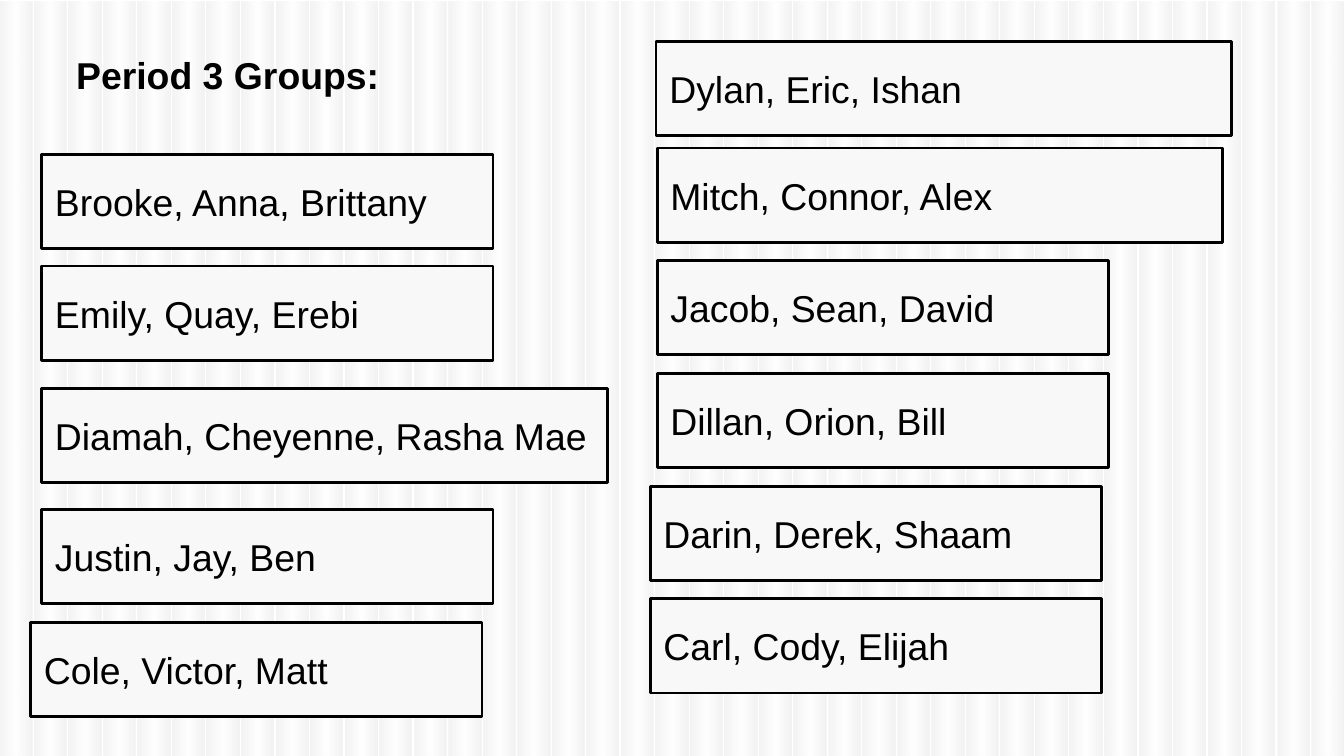
from dataclasses import dataclass

from lxml import etree
from pptx import Presentation
from pptx import util as u
from pptx.dml import color as c
from pptx.enum import shapes as s
from pptx.enum import text as t
from pptx.oxml import ns

STRIPES = 39
SPAN = 24.79
PITCH = 2.13
LEFT, RIGHT = 0.79, 12.42
SHORT, LONG = 8.53, 10.69


@dataclass
class Box:
    names: str
    left: float
    top: float
    width: float = SHORT
    height: float = 1.78


@dataclass
class Stop:
    place: int
    tint: str
    alpha: int = 19


BLEND = [Stop(0, "BFBFBF"), Stop(50, "FFFFFF"), Stop(97, "BFBFBF"), Stop(100, "BFBFBF")]


def row(step: int) -> float:
    return 2.8 + PITCH * step


BOXES = [
    Box("Carl, Cody, Elijah", 12.29, row(4)),
    Box("Brooke, Anna, Brittany", LEFT, 2.92),
    Box("Dylan, Eric, Ishan", 12.4, 0.79, 10.87),
    Box("Mitch, Connor, Alex", RIGHT, row(0), LONG),
    Box("Jacob, Sean, David", RIGHT, row(1)),
    Box("Dillan, Orion, Bill", RIGHT, row(2)),
    Box("Darin, Derek, Shaam", 12.29, row(3)),
    Box("Cole, Victor, Matt", 0.58, 11.76),
    Box("Justin, Jay, Ben", LEFT, 9.63),
    Box("Diamah, Cheyenne, Rasha Mae", LEFT, 7.34, LONG),
    Box("Emily, Quay, Erebi", LEFT, 5.03),
]
TITLE = Box("Period 3 Groups:", 1.19, 0.74, 9.5, 1.45)


def paint(target, code: str) -> None:
    target.rgb = c.RGBColor.from_string(code)


def bounds(box: Box) -> list[u.Length]:
    return [u.Cm(n) for n in (box.left, box.top, box.width, box.height)]


def add_rect(slide, box: Box):
    shape = slide.shapes.add_shape(s.MSO_SHAPE.RECTANGLE, *bounds(box))
    shape.shadow.inherit = False
    return shape


def add_stripe(slide, left: float) -> None:
    shape = add_rect(slide, Box("", left, 0.03, 0.61, 14.26))
    shape.line.fill.background()
    shape.fill.gradient()
    shape.fill.gradient_angle = 0
    stops = shape.element.spPr.find(".//" + ns.qn("a:gsLst"))
    for old in list(stops):
        stops.remove(old)
    for stop in BLEND:
        mark = etree.SubElement(stops, ns.qn("a:gs"), pos=str(stop.place * 1000))
        tint = etree.SubElement(mark, ns.qn("a:srgbClr"), val=stop.tint)
        etree.SubElement(tint, ns.qn("a:alpha"), val=str(stop.alpha * 1000))


def write(shape, words: str, anchor, bold: bool = False) -> None:
    frame = shape.text_frame
    frame.word_wrap = True
    frame.vertical_anchor = anchor
    frame.margin_left = frame.margin_right = u.Cm(0.25)
    frame.margin_top = frame.margin_bottom = u.Cm(0.25)
    line = frame.paragraphs[0]
    line.alignment = t.PP_ALIGN.LEFT
    run = line.add_run()
    run.text = words
    run.font.name = "Arial"
    run.font.size = u.Pt(20)
    run.font.bold = bold
    paint(run.font.color, "000000")


def add_group(slide, box: Box) -> None:
    shape = add_rect(slide, box)
    shape.fill.solid()
    paint(shape.fill.fore_color, "F8F8F8")
    paint(shape.line.color, "000000")
    shape.line.width = u.Pt(1.5)
    write(shape, box.names, t.MSO_ANCHOR.MIDDLE)


def main() -> None:
    deck = Presentation()
    deck.slide_width, deck.slide_height = u.Cm(25.4), u.Cm(14.29)
    slide = deck.slides.add_slide(deck.slide_layouts[6])
    slide.background.fill.solid()
    paint(slide.background.fill.fore_color, "FFFFFF")
    for step in range(STRIPES):
        add_stripe(slide, SPAN * step / (STRIPES - 1))
    for box in BOXES:
        add_group(slide, box)
    title = slide.shapes.add_textbox(*bounds(TITLE))
    write(title, TITLE.names, t.MSO_ANCHOR.TOP, bold=True)
    deck.save("out.pptx")


if __name__ == "__main__":
    main()
